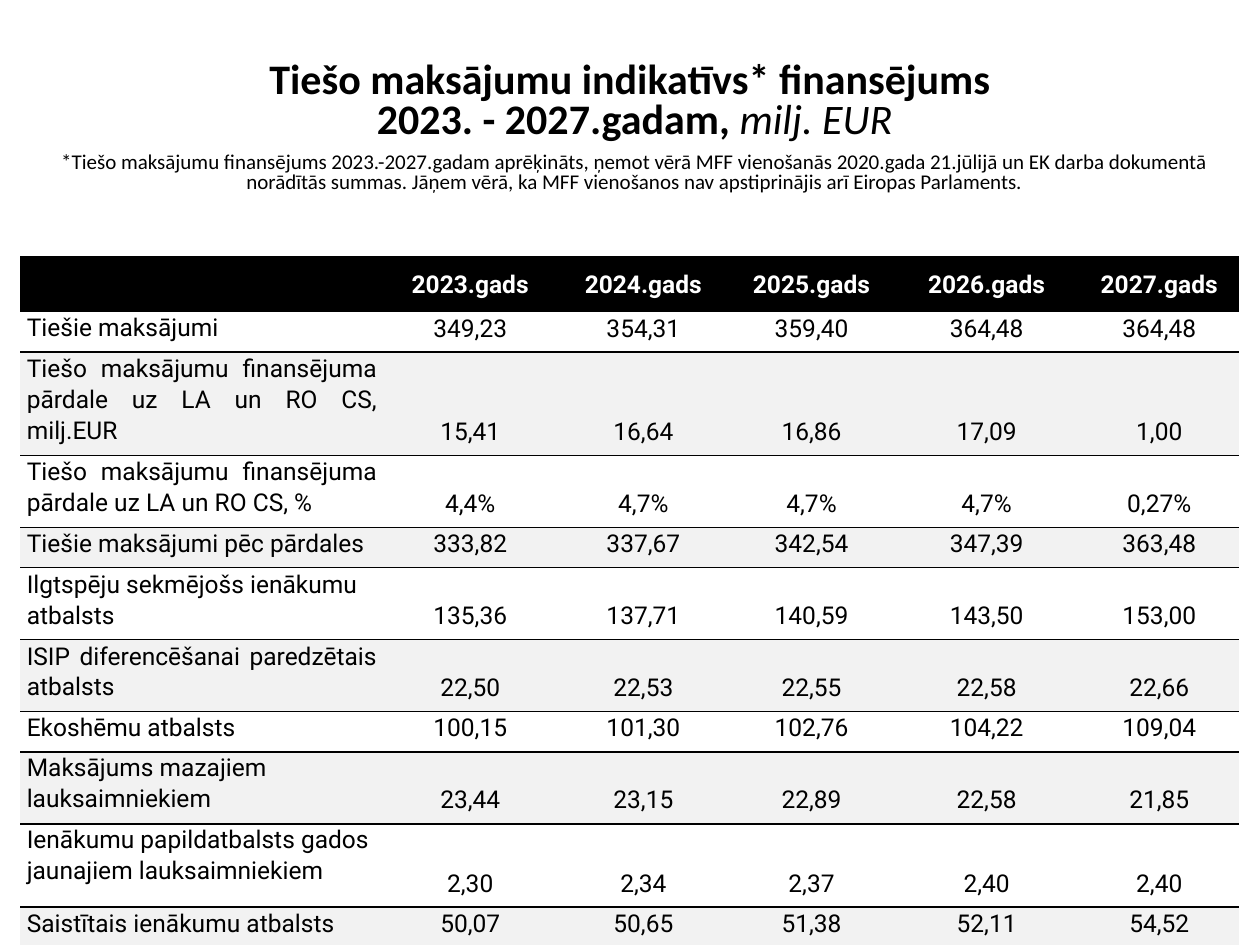
from lxml import etree
from pptx import Presentation
from pptx.dml.color import RGBColor
from pptx.enum.text import MSO_ANCHOR, PP_ALIGN
from pptx.oxml.ns import qn
from pptx.util import Cm, Pt

LEFT, MID, JUST = PP_ALIGN.LEFT, PP_ALIGN.CENTER, PP_ALIGN.JUSTIFY
TOP, HALF, LOW = MSO_ANCHOR.TOP, MSO_ANCHOR.MIDDLE, MSO_ANCHOR.BOTTOM
INK = {"black": "000000", "white": "FFFFFF", "band": "F2F2F2"}
PLAIN = "{2D5ABB26-0587-4C30-8999-92F81FD0307C}"

HEAD = [
    [("Tiešo maksājumu indikatīvs* finansējums \n2023. - 2027.gadam, ",
      {"size": Pt(24), "bold": True}),
     ("milj. EUR", {"size": Pt(24), "italic": True})],
    [("*Tiešo maksājumu finansējums 2023.-2027.gadam aprēķināts, ņemot vērā "
      "MFF vienošanās 2020.gada 21.jūlijā un EK darba dokumentā norādītās "
      "summas. Jāņem vērā, ka MFF vienošanos nav apstiprinājis arī Eiropas "
      "Parlaments.", {"size": Pt(12)})],
]
YEARS = [f"{year}.gads" for year in range(2023, 2028)]
ROWS = [
    ("Tiešie maksājumi", LEFT, HALF, 0.74,
     "349,23 354,31 359,40 364,48 364,48"),
    ("Tiešo maksājumu finansējuma pārdale uz LA un RO CS, milj.EUR", JUST,
     HALF, 1.68, "15,41 16,64 16,86 17,09 1,00"),
    ("Tiešo maksājumu finansējuma pārdale uz LA un RO CS, %", JUST,
     HALF, 1.19, "4,4% 4,7% 4,7% 4,7% 0,27%"),
    ("Tiešie maksājumi pēc pārdales", LEFT, HALF, 0.74,
     "333,82 337,67 342,54 347,39 363,48"),
    ("Ilgtspēju sekmējošs ienākumu atbalsts", LEFT, HALF, 1.19,
     "135,36 137,71 140,59 143,50 153,00"),
    ("ISIP diferencēšanai paredzētais atbalsts", JUST, HALF, 1.19,
     "22,50 22,53 22,55 22,58 22,66"),
    ("Ekoshēmu atbalsts", LEFT, HALF, 0.74,
     "100,15 101,30 102,76 104,22 109,04"),
    ("Maksājums mazajiem lauksaimniekiem", LEFT, TOP, 1.19,
     "23,44 23,15 22,89 22,58 21,85"),
    ("Ienākumu papildatbalsts gados jaunajiem lauksaimniekiem", LEFT, TOP,
     1.68, "2,30 2,34 2,37 2,40 2,40"),
    ("Saistītais ienākumu atbalsts", LEFT, HALF, 0.74,
     "50,07 50,65 51,38 52,11 54,52"),
]
COLS = [7.29, 3.53, 3.45, 3.33, 3.73, 3.23]


def apply(item, form):
    for name, value in form.items():
        setattr(item, name, value)


class Deck:
    para = {"space_after": Pt(6), "alignment": MID}
    pad = {"margin_left": Cm(0.13), "margin_right": Cm(0.1),
           "margin_bottom": Cm(0.18)}

    def __init__(self, wide, high):
        self.file = Presentation()
        apply(self.file, {"slide_width": Cm(wide), "slide_height": Cm(high)})
        self.slide = self.file.slides.add_slide(self.file.slide_layouts[6])

    def words(self, para, runs, form, face, ink="black"):
        apply(para, {**self.para, **form})
        for text, look in runs:
            for num, line in enumerate(text.split("\n")):
                if num:
                    para.add_line_break()
                run = para.add_run()
                run.text = line
                apply(run.font, {"name": face, "bold": False, **look})
                run.font.color.rgb = RGBColor.from_string(INK[ink])

    def text(self, box, paras):
        frame = self.slide.shapes.add_textbox(*map(Cm, box)).text_frame
        apply(frame, {"word_wrap": True, "vertical_anchor": HALF})
        for num, runs in enumerate(paras):
            para = frame.add_paragraph() if num else frame.paragraphs[0]
            self.words(para, runs, {"line_spacing": 0.8}, "Calibri")

    def edge(self, cell, side):
        line = etree.Element(qn(f"a:{side}"), w=str(Pt(1)))
        fill = etree.SubElement(line, qn("a:solidFill"))
        etree.SubElement(fill, qn("a:srgbClr"), val=INK["black"])
        cell._tc.get_or_add_tcPr().insert(0, line)

    def cell(self, cell, text, align, anchor, top, fill, ink, bold):
        apply(cell, {**self.pad, "margin_top": Cm(top),
                     "vertical_anchor": anchor})
        if fill:
            cell.fill.solid()
            cell.fill.fore_color.rgb = RGBColor.from_string(INK[fill])
        else:
            cell.fill.background()
        if text:
            self.words(cell.text_frame.paragraphs[0],
                       [(text, {"size": Pt(14), "bold": bold})],
                       {"alignment": align, "line_spacing": 1.07},
                       "Roboto", ink)

    def table(self, box, cols, years, rows):
        grid = self.slide.shapes.add_table(
            len(rows) + 1, len(cols), *map(Cm, box)).table
        grid._tbl.tblPr.find(qn("a:tableStyleId")).text = PLAIN
        for col, wide in zip(grid.columns, cols):
            col.width = Cm(wide)
        grid.rows[0].height = Cm(1.04)
        for col, year in enumerate(["", *years]):
            self.cell(grid.cell(0, col), year, MID, HALF, 0.18,
                      "black", "white", True)
        for row, (name, align, anchor, high, sums) in enumerate(rows, 1):
            grid.rows[row].height = Cm(high)
            fill, side = (None, "lnB") if row % 2 else ("band", "lnT")
            for col, text in enumerate([name, *sums.split()]):
                place = (MID, LOW) if col else (align, anchor)
                spot = grid.cell(row, col)
                self.cell(spot, text, *place, 0, fill, "black", False)
                self.edge(spot, side)


def main():
    deck = Deck(25.4, 19.05)
    deck.text((0.41, 1.12, 24.77, 2.92), HEAD)
    deck.table((0.41, 5.16, sum(COLS), 13.08), COLS, YEARS, ROWS)
    deck.file.save("out.pptx")


if __name__ == "__main__":
    main()
